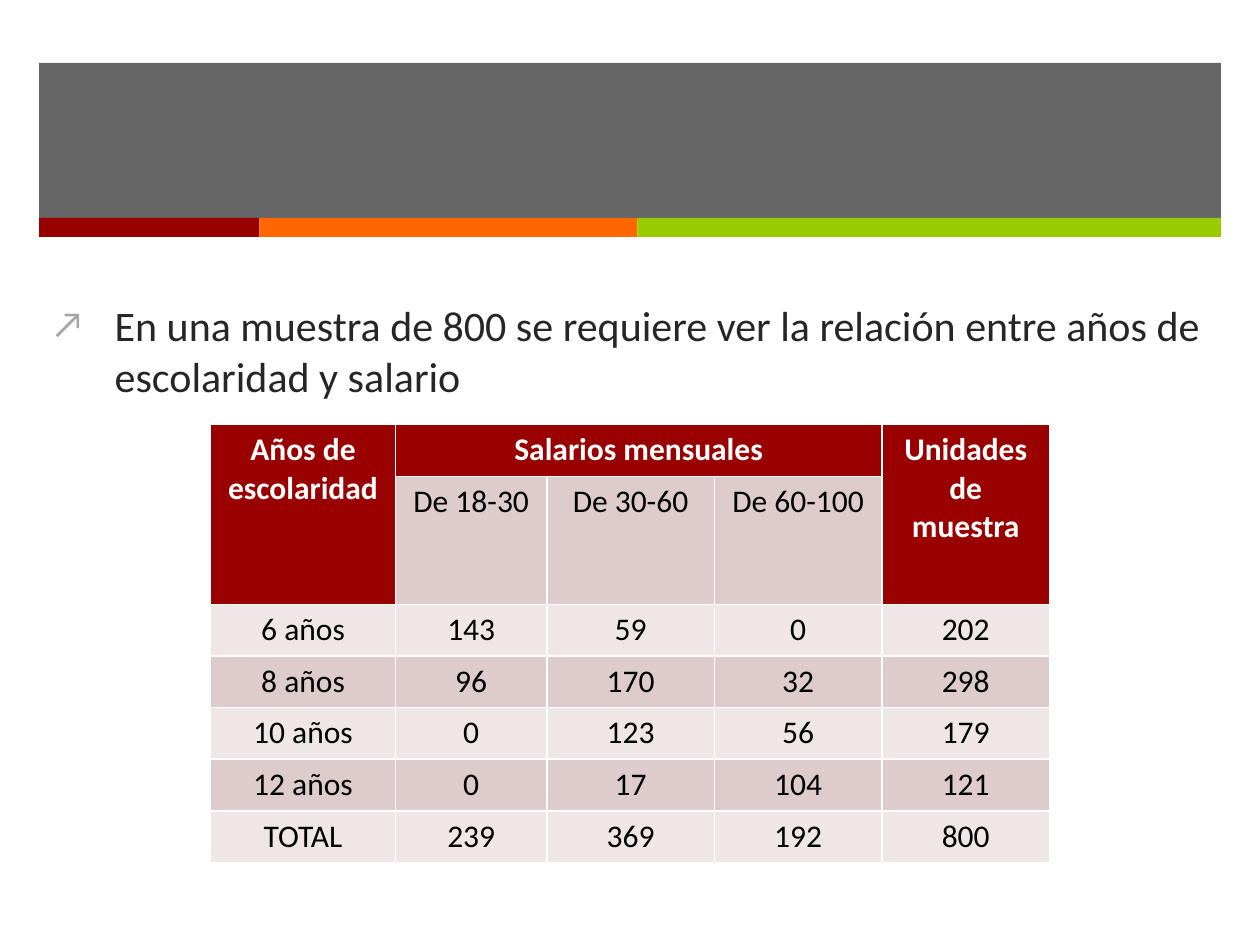
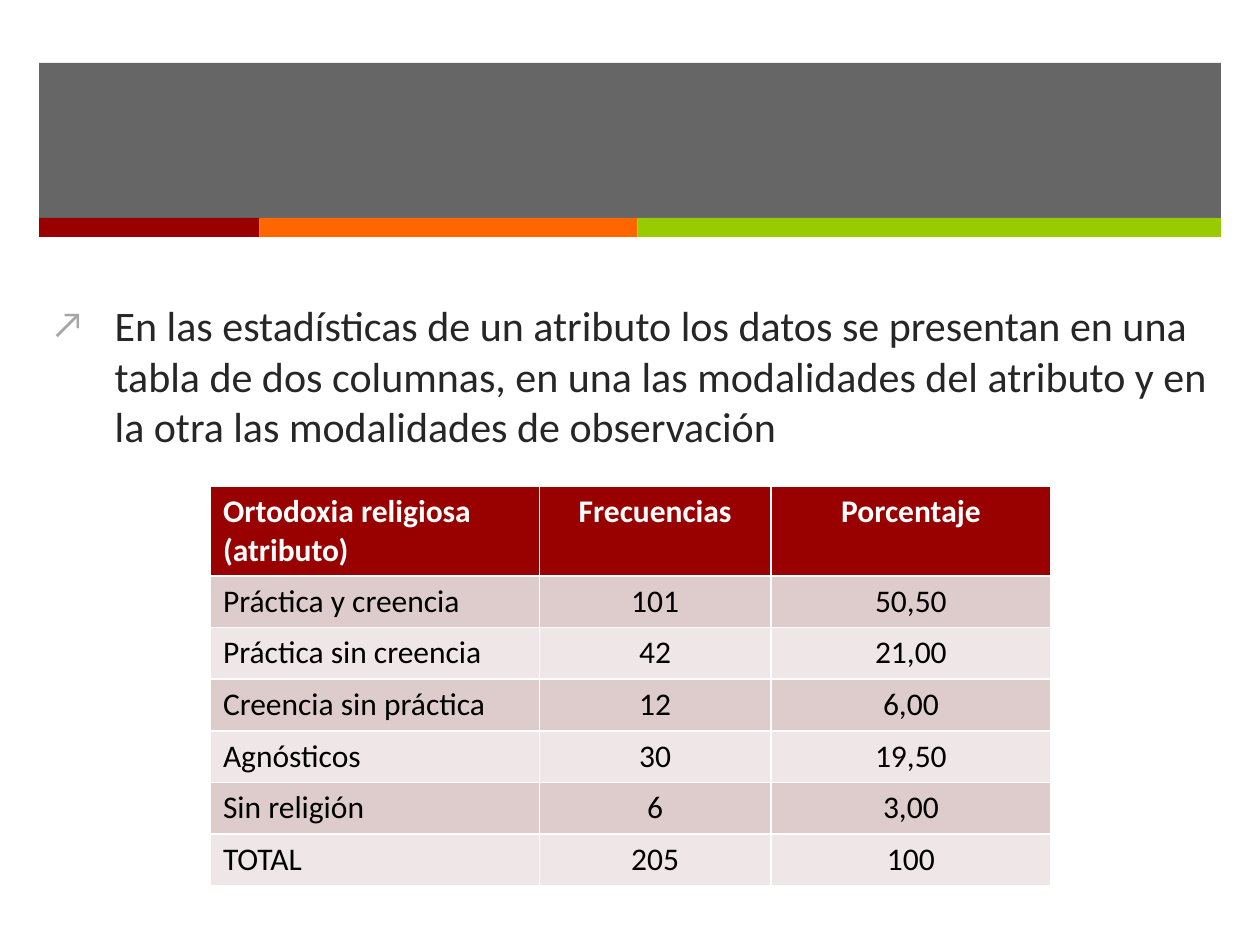
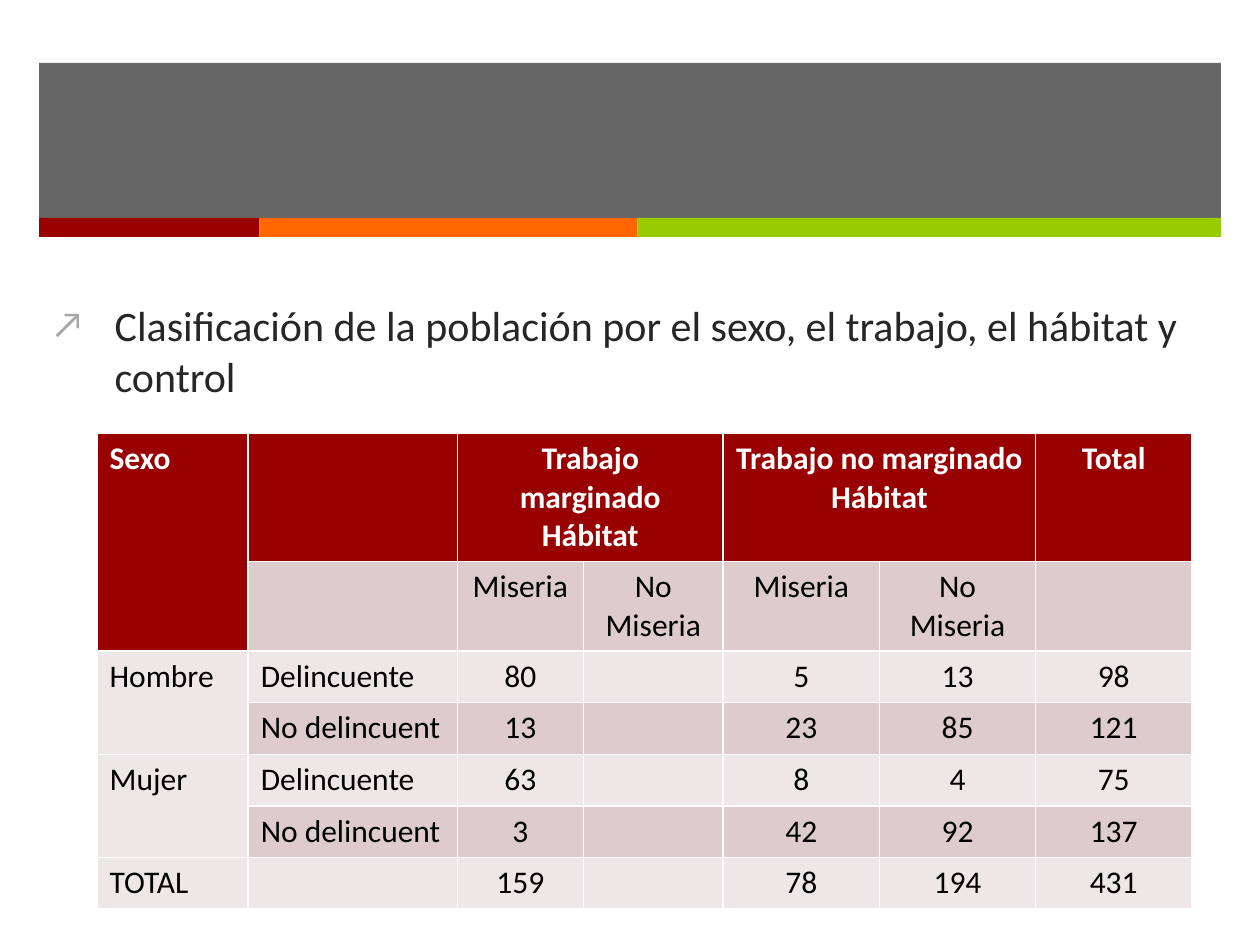
"""Build three slides that each explain one kind of statistical table."""
from dataclasses import dataclass, field

import lxml.etree
import pptx
import pptx.dml.color
import pptx.enum.shapes
import pptx.enum.text
import pptx.oxml.ns
import pptx.presentation
import pptx.slide
import pptx.table
import pptx.text.text
import pptx.util

Inches = pptx.util.Inches
RGBColor = pptx.dml.color.RGBColor
ALIGN = pptx.enum.text.PP_ALIGN

INK = RGBColor(0x26, 0x26, 0x26)
BULLET_GREY = RGBColor(0xA6, 0xA6, 0xA6)
CRIMSON = RGBColor(0x99, 0x00, 0x00)
ORANGE = RGBColor(0xFF, 0x66, 0x00)
LIME = RGBColor(0x99, 0xCC, 0x00)
ROSE = RGBColor(0xDE, 0xCC, 0xCC)
PALE_ROSE = RGBColor(0xEF, 0xE7, 0xE7)
WHITE = RGBColor(0xFF, 0xFF, 0xFF)
BLACK = RGBColor(0x00, 0x00, 0x00)

FONT = "Calibri"
MARGIN = 0.31
CONTENT_WIDTH = 9.38
ROW_HEIGHT = 0.41


@dataclass(frozen=True)
class Band:
    """A filled rectangle of the heading, in inches."""

    left: float
    top: float
    width: float
    height: float
    color: RGBColor
    opacity: int = 100


@dataclass(frozen=True)
class Span:
    """A merged block of cells, from its first cell to its last."""

    first: tuple[int, int]
    last: tuple[int, int]


@dataclass(frozen=True)
class StatTable:
    """A statement and the table that illustrates it."""

    statement: str
    left: float
    top: float
    columns: list[float]
    rows: list[list[str]]
    label_columns: int = 0
    tall_rows: dict[int, float] = field(default_factory=dict)
    spans: tuple[Span, ...] = ()


BANDS = [
    Band(MARGIN, 0.5, CONTENT_WIDTH, 1.24, INK, 70),
    Band(MARGIN, 1.73, 1.75, 0.15, CRIMSON),
    Band(2.06, 1.73, 3, 0.15, ORANGE),
    Band(5.06, 1.73, 4.63, 0.15, LIME),
]

SCHOOLING = StatTable(
    "En una muestra de 800 se requiere ver la relación entre años de escolaridad y salario",
    1.67, 3.37, [1.47, 1.2, 1.33, 1.33, 1.33],
    [
        ["Años de escolaridad", "Salarios mensuales", "", "", "Unidades de muestra"],
        ["", "De 18-30", "De 30-60", "De 60-100", ""],
        ["6 años", "143", "59", "0", "202"],
        ["8 años", "96", "170", "32", "298"],
        ["10 años", "0", "123", "56", "179"],
        ["12 años", "0", "17", "104", "121"],
        ["TOTAL", "239", "369", "192", "800"],
    ],
    tall_rows={1: 1.01},
    spans=(Span((0, 0), (1, 0)), Span((0, 1), (0, 3)), Span((0, 4), (1, 4))),
)

RELIGION = StatTable(
    "En las estadísticas de un atributo los datos se presentan en una tabla de dos "
    "columnas, en una las modalidades del atributo y en la otra las modalidades de observación",
    1.67, 3.86, [2.61, 1.84, 2.22],
    [
        ["Ortodoxia religiosa\n(atributo)", "Frecuencias", "Porcentaje"],
        ["Práctica y creencia", "101", "50,50"],
        ["Práctica sin creencia", "42", "21,00"],
        ["Creencia sin práctica", "12", "6,00"],
        ["Agnósticos", "30", "19,50"],
        ["Sin religión", "6", "3,00"],
        ["TOTAL", "205", "100"],
    ],
    label_columns=1,
    tall_rows={0: 0.7},
)

POPULATION = StatTable(
    "Clasificación de la población por el sexo, el trabajo, el hábitat y control",
    0.77, 3.44, [1.2, 1.66, 1, 1.11, 1.24, 1.24, 1.24],
    [
        ["Sexo", "", "Trabajo marginado Hábitat", "", "Trabajo no marginado\nHábitat", "", "Total"],
        ["", "", "Miseria", "No Miseria", "Miseria", "No Miseria", ""],
        ["Hombre", "Delincuente", "80", "", "5", "13", "98"],
        ["", "No delincuent", "13", "", "23", "85", "121"],
        ["Mujer", "Delincuente", "63", "", "8", "4", "75"],
        ["", "No delincuent", "3", "", "42", "92", "137"],
        ["TOTAL", "", "159", "", "78", "194", "431"],
    ],
    label_columns=2,
    tall_rows={0: 1.01, 1: 0.7},
    spans=(
        Span((0, 0), (1, 0)), Span((0, 2), (0, 3)), Span((0, 4), (0, 5)),
        Span((2, 0), (3, 0)), Span((4, 0), (5, 0)),
    ),
)


def add_child(parent: lxml.etree._Element, tag: str, **attributes: str) -> lxml.etree._Element:
    """Append a drawing element to its parent."""
    return lxml.etree.SubElement(parent, pptx.oxml.ns.qn(tag), attributes)


def add_run(paragraph: pptx.text.text._Paragraph, text: str, size: int,
            color: RGBColor, bold: bool = False) -> None:
    """Add one formatted run."""
    run = paragraph.add_run()
    run.text = text
    run.font.name = FONT
    run.font.size = pptx.util.Pt(size)
    run.font.bold = bold
    run.font.color.rgb = color


def draw_band(slide: pptx.slide.Slide, band: Band) -> None:
    """Draw one heading band."""
    shape = slide.shapes.add_shape(
        pptx.enum.shapes.MSO_SHAPE.RECTANGLE,
        Inches(band.left), Inches(band.top), Inches(band.width), Inches(band.height))
    shape.shadow.inherit = False
    shape.line.fill.background()
    shape.fill.solid()
    shape.fill.fore_color.rgb = band.color
    if band.opacity < 100:
        color = shape._element.spPr.find(".//" + pptx.oxml.ns.qn("a:srgbClr"))
        add_child(color, "a:alpha", val=str(band.opacity * 1000))


def write_statement(slide: pptx.slide.Slide, statement: str) -> None:
    """Fill the body placeholder with one bulleted statement."""
    body = slide.placeholders[1]
    body.left, body.top = Inches(MARGIN), Inches(2.33)
    body.width, body.height = Inches(CONTENT_WIDTH), Inches(4.37)
    paragraph = body.text_frame.paragraphs[0]
    paragraph.space_before = pptx.util.Pt(20)
    properties = paragraph._p.get_or_add_pPr()
    properties.set("marL", str(Inches(0.5)))
    properties.set("indent", str(Inches(-0.5)))
    add_child(add_child(properties, "a:buClr"), "a:srgbClr", val=str(BULLET_GREY))
    add_child(properties, "a:buSzPct", val="90000")
    add_child(properties, "a:buFont", typeface=FONT)
    add_child(properties, "a:buChar", char="↗")
    add_run(paragraph, statement, 24, INK)


def fill_cell(cell: pptx.table._Cell, text: str, row: int, is_label: bool) -> None:
    """Colour a cell by its row and write its lines."""
    is_header = row == 0
    cell.fill.solid()
    cell.fill.fore_color.rgb = CRIMSON if is_header else ROSE if row % 2 else PALE_ROSE
    if not text:
        return
    frame = cell.text_frame
    for number, line in enumerate(text.split("\n")):
        paragraph = frame.add_paragraph() if number else frame.paragraphs[0]
        paragraph.alignment = ALIGN.LEFT if is_label else ALIGN.CENTER
        add_run(paragraph, line, 18, WHITE if is_header else BLACK, is_header)


def draw_table(slide: pptx.slide.Slide, stats: StatTable) -> None:
    """Draw the table with its merged cells."""
    heights = [stats.tall_rows.get(row, ROW_HEIGHT) for row in range(len(stats.rows))]
    table = slide.shapes.add_table(
        len(heights), len(stats.columns), Inches(stats.left), Inches(stats.top),
        Inches(sum(stats.columns)), Inches(sum(heights))).table
    for column, width in zip(table.columns, stats.columns):
        column.width = Inches(width)
    for table_row, height in zip(table.rows, heights):
        table_row.height = Inches(height)
    for span in stats.spans:
        table.cell(*span.first).merge(table.cell(*span.last))
    for row, texts in enumerate(stats.rows):
        for column, text in enumerate(texts):
            fill_cell(table.cell(row, column), text, row, column < stats.label_columns)


def add_stat_slide(deck: pptx.presentation.Presentation, stats: StatTable) -> None:
    """Add a slide with the bands, a statement and its table."""
    slide = deck.slides.add_slide(deck.slide_layouts[1])
    title = slide.shapes.title._element
    title.getparent().remove(title)
    for band in BANDS:
        draw_band(slide, band)
    write_statement(slide, stats.statement)
    draw_table(slide, stats)


def main() -> None:
    """Build and save the deck."""
    deck = pptx.Presentation()
    deck.slide_width, deck.slide_height = Inches(10), Inches(7.5)
    for stats in (SCHOOLING, RELIGION, POPULATION):
        add_stat_slide(deck, stats)
    deck.save("out.pptx")


if __name__ == "__main__":
    main()
